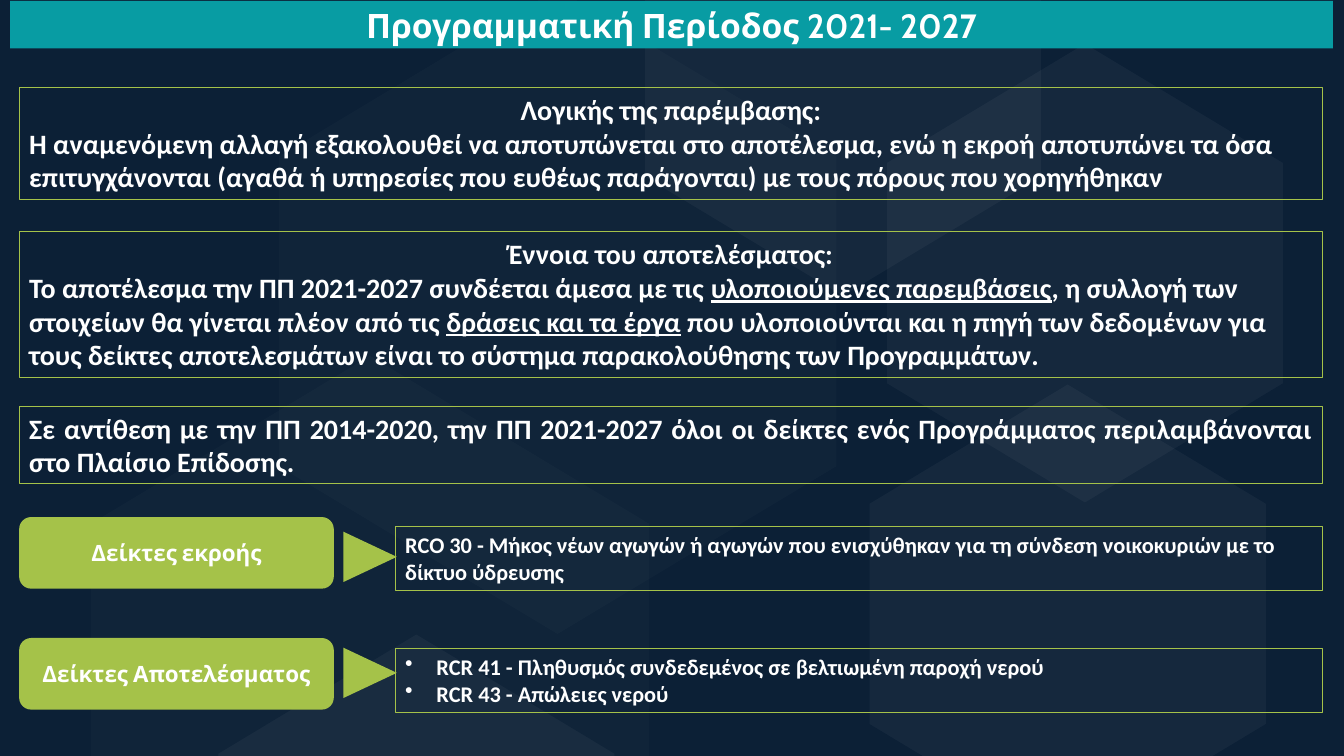
"""Build the slide on indicators for the 2021-2027 programming period."""
from dataclasses import dataclass

from lxml.etree import SubElement
from pptx import Presentation
from pptx.dml.color import RGBColor
from pptx.enum.shapes import MSO_SHAPE
from pptx.enum.text import MSO_ANCHOR, MSO_AUTO_SIZE, PP_ALIGN
from pptx.oxml.ns import qn
from pptx.util import Inches, Pt

WIDTH, HEIGHT = Inches(13.33), Inches(7.5)
LEFT, FULL = 1.43, 97
LEFT_AL, CENTER, JUSTIFY = PP_ALIGN.LEFT, PP_ALIGN.CENTER, PP_ALIGN.JUSTIFY


@dataclass(frozen=True)
class Theme:
    navy: str = "0C2036"
    teal: str = "089CA3"
    green: str = "A5C249"
    white: str = "FFFFFF"
    heading: str = "Cabin"
    body: str = "Calibri"
    title_size: int = 24
    panel_size: int = 20
    detail_size: int = 16
    line_width: float = 0.75


THEME = Theme()
SMALL, LARGE = (29.48, 60.67, 4), (41.49, 85.33, 2)
HEXAGONS = [
    (79.44, 81.2, SMALL), (80.72, 36.13, SMALL), (41.49, 41.2, LARGE),
    (27.53, 89.73, LARGE), (62.72, 8.8, SMALL), (30.98, 114.27, SMALL),
]
PANELS = [
    (11.6, 14.8, [
        ("Λογικής της παρέμβασης:", CENTER),
        ("Η αναμενόμενη αλλαγή εξακολουθεί να αποτυπώνεται στο αποτέλεσμα, "
         "ενώ η εκροή αποτυπώνει τα όσα", JUSTIFY),
        ("επιτυγχάνονται (αγαθά ή υπηρεσίες που ευθέως παράγονται) "
         "με τους πόρους που χορηγήθηκαν", JUSTIFY),
    ]),
    (30.67, 19.33, [
        ("Έννοια του αποτελέσματος:", CENTER),
        ("Το αποτέλεσμα την ΠΠ 2021-2027 συνδέεται άμεσα με τις "
         "_υλοποιούμενες παρεμβάσεις_, η συλλογή των στοιχείων θα γίνεται "
         "πλέον από τις _δράσεις και τα έργα_ που υλοποιούνται και η πηγή "
         "των δεδομένων για τους δείκτες αποτελεσμάτων είναι το σύστημα "
         "παρακολούθησης των Προγραμμάτων.", LEFT_AL),
    ]),
    (53.73, 10.27, [
        ("Σε αντίθεση με την ΠΠ 2014-2020, την ΠΠ 2021-2027 όλοι οι δείκτες "
         "ενός Προγράμματος περιλαμβάνονται στο Πλαίσιο Επίδοσης.", JUSTIFY),
    ]),
]
INDICATORS = [
    (68.4, 70.13, 69.6, "Δείκτες εκροής", False, [
        ("RCO 30 - Μήκος νέων αγωγών ή αγωγών που ενισχύθηκαν για τη σύνδεση "
         "νοικοκυριών με το δίκτυο ύδρευσης", LEFT_AL),
    ]),
    (84.4, 85.47, 85.73, "Δείκτες Αποτελέσματος", True, [
        ("RCR 41 - Πληθυσμός συνδεδεμένος σε βελτιωμένη παροχή νερού", LEFT_AL),
        ("RCR 43 - Απώλειες νερού", LEFT_AL),
    ]),
]


def rgb(code):
    """Return a colour from its hex code."""
    return RGBColor.from_string(code)


def share(x, y):
    """Turn percentages of the slide's width and height into lengths."""
    return round(WIDTH * x / 100), round(HEIGHT * y / 100)


def set_attrs(obj, values):
    """Set each attribute named in a dict."""
    for name, value in values.items():
        setattr(obj, name, value)


def paint(sp, color):
    """Fill a shape and remove its outline."""
    sp.fill.solid()
    sp.fill.fore_color.rgb = rgb(color)
    sp.line.fill.background()


def add_bullet(p):
    """Give a paragraph a bullet with a hanging indent."""
    pPr = p._p.get_or_add_pPr()
    indent = Inches(0.31)
    pPr.set("marL", str(indent))
    pPr.set("indent", str(-indent))
    SubElement(pPr, qn("a:buChar")).set("char", "•")


def write(sp, paragraphs, font, size, anchor, bullets=False):
    """Write bold white paragraphs, underlining what stands between underscores."""
    tf = sp.text_frame
    set_attrs(tf, {"word_wrap": True, "auto_size": MSO_AUTO_SIZE.NONE,
                   "vertical_anchor": anchor})
    for i, (text, align) in enumerate(paragraphs):
        p = tf.add_paragraph() if i else tf.paragraphs[0]
        p.alignment = align
        if bullets:
            add_bullet(p)
        for j, part in enumerate(text.split("_")):
            r = p.add_run()
            r.text = part
            set_attrs(r.font, {"name": font, "size": Pt(size), "bold": True,
                               "underline": j % 2 == 1})
            r.font.color.rgb = rgb(THEME.white)


def add_preset(s, kind, x, y, w, h):
    """Add a preset shape without a shadow."""
    sp = s.shapes.add_shape(kind, *share(x, y), *share(w, h))
    sp.shadow.inherit = False
    return sp


def add_hexagon(s, cx, cy, w, h, opacity):
    """Add a translucent upright hexagon around a centre."""
    corners = [(0, -0.5), (0.5, -0.24), (0.5, 0.24),
               (0, 0.5), (-0.5, 0.24), (-0.5, -0.24)]
    points = [share(cx + dx * w, cy + dy * h) for dx, dy in corners]
    builder = s.shapes.build_freeform(*points[0])
    builder.add_line_segments(points[1:], close=True)
    sp = builder.convert_to_shape()
    sp.shadow.inherit = False
    paint(sp, THEME.white)
    color = sp.element.spPr.find(qn("a:solidFill")).find(qn("a:srgbClr"))
    SubElement(color, qn("a:alpha")).set("val", str(opacity * 1000))


def format_title(s, text):
    """Turn the title placeholder into a rounded banner above the backdrop."""
    sp = s.shapes.title
    (left, top), (width, height) = share(0.75, 0.13), share(98.42, 6.27)
    set_attrs(sp, {"left": left, "top": top, "width": width, "height": height})
    geometry = SubElement(sp.element.spPr, qn("a:prstGeom"))
    geometry.set("prst", "roundRect")
    SubElement(geometry, qn("a:avLst"))
    paint(sp, THEME.teal)
    write(sp, [(text, CENTER)], THEME.heading, THEME.title_size, MSO_ANCHOR.MIDDLE)
    sp.element.getparent().append(sp.element)


def add_panel(s, x, y, w, h, paragraphs, size, bullets=False):
    """Add an outlined text panel."""
    sp = add_preset(s, MSO_SHAPE.RECTANGLE, x, y, w, h)
    sp.fill.background()
    sp.line.color.rgb = rgb(THEME.green)
    sp.line.width = Pt(THEME.line_width)
    write(sp, paragraphs, THEME.body, size, MSO_ANCHOR.TOP, bullets)


def add_label(s, y, text):
    """Add a rounded green label."""
    sp = add_preset(s, MSO_SHAPE.ROUNDED_RECTANGLE, LEFT, y, 23.41, 9.47)
    paint(sp, THEME.green)
    write(sp, [(text, CENTER)], THEME.heading, THEME.detail_size, MSO_ANCHOR.MIDDLE)


def add_pointer(s, y):
    """Add a triangle that points from a label to its panel."""
    sp = add_preset(s, MSO_SHAPE.ISOSCELES_TRIANGLE, 25.66, y, 3.75, 7.07)
    sp.rotation = 90
    paint(sp, THEME.green)


def main():
    """Build and save the slide."""
    prs = Presentation()
    set_attrs(prs, {"slide_width": WIDTH, "slide_height": HEIGHT})
    s = prs.slides.add_slide(prs.slide_layouts[5])
    s.background.fill.solid()
    s.background.fill.fore_color.rgb = rgb(THEME.navy)
    for cx, cy, look in HEXAGONS:
        add_hexagon(s, cx, cy, *look)
    format_title(s, "Προγραμματική Περίοδος 2021- 2027")
    for y, h, paragraphs in PANELS:
        add_panel(s, LEFT, y, FULL, h, paragraphs, THEME.panel_size)
    for label_y, pointer_y, panel_y, label, bullets, paragraphs in INDICATORS:
        add_label(s, label_y, label)
        add_pointer(s, pointer_y)
        add_panel(s, 29.41, panel_y, 69.02, 8.53, paragraphs,
                  THEME.detail_size, bullets)
    prs.save("out.pptx")


if __name__ == "__main__":
    main()
